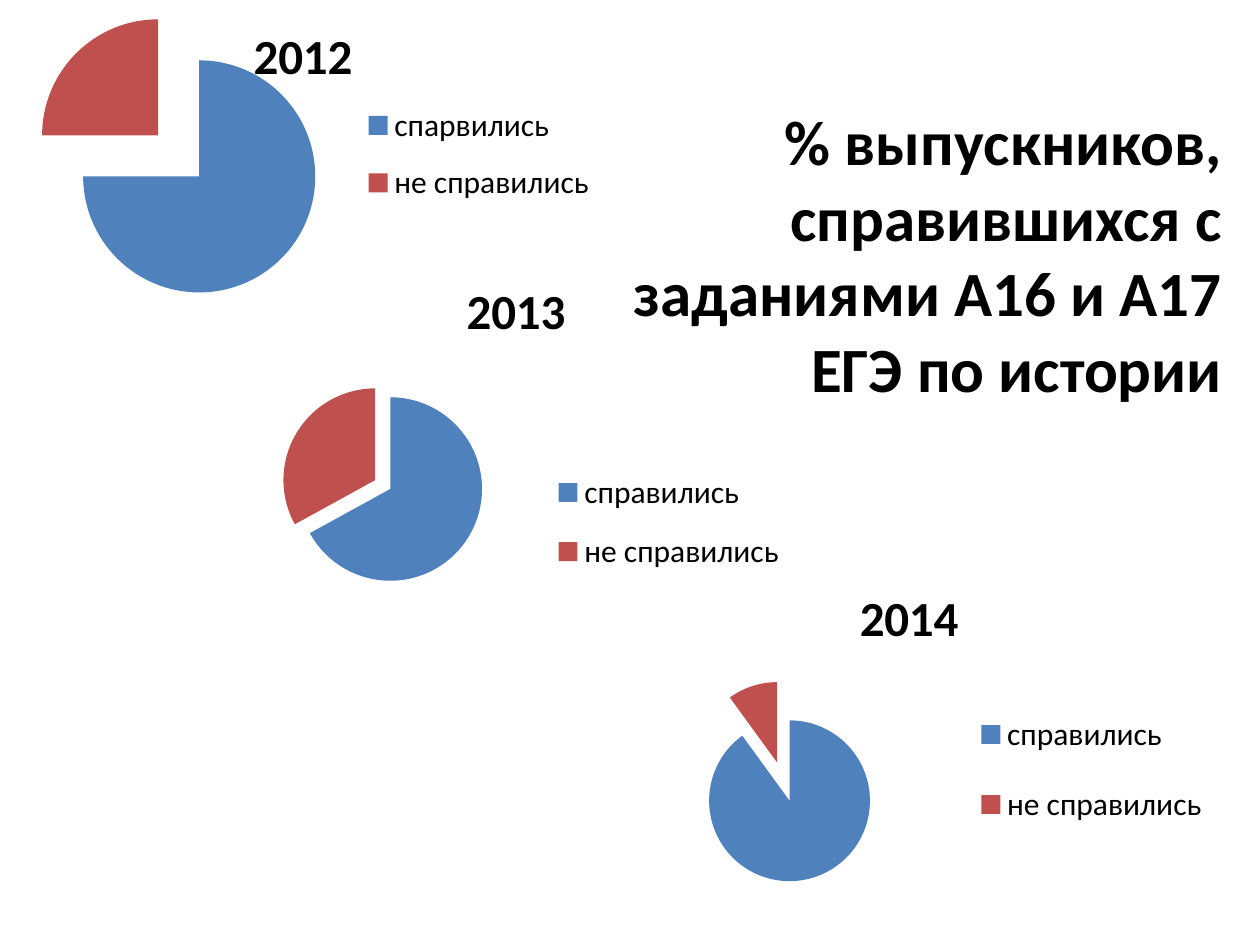
from lxml import etree
from pptx import Presentation
from pptx.chart.data import CategoryChartData
from pptx.dml.color import RGBColor
from pptx.enum import chart as ch, text
from pptx.oxml.ns import qn
from pptx.util import Inches, Pt

COLORS = {"passed": "4F81BD", "failed": "C0504D", "text": "000000"}
FONT = "Calibri"
EXPLOSION = 25


def style_font(font, size, bold=False):
    font.name = FONT
    font.size = Pt(size)
    font.bold = bold
    font.color.rgb = RGBColor.from_string(COLORS["text"])


def add_heading(slide, wording, box):
    heading = slide.shapes.title
    heading.left, heading.top, heading.width, heading.height = map(Inches, box)
    frame = heading.text_frame
    frame.text = wording
    frame.word_wrap = True
    frame.vertical_anchor = text.MSO_ANCHOR.MIDDLE
    line = frame.paragraphs[0]
    line.alignment = text.PP_ALIGN.RIGHT
    style_font(line.runs[0].font, 36, bold=True)


def explosion_before(element, percent):
    """Insert a slice offset just ahead of the given chart element."""
    offset = etree.Element(qn("c:explosion"), val=str(percent))
    element.addprevious(offset)


def place_part(chart, part, box, position, inner=False):
    """Fix a chart part's box, in fractions of the chart."""
    holder = chart._chartSpace.find(".//" + qn(part))
    for old in holder.findall(qn("c:layout")):
        holder.remove(old)
    layout = etree.Element(qn("c:layout"))
    manual = etree.SubElement(layout, qn("c:manualLayout"))
    settings = {"layoutTarget": "inner"} if inner else {}
    settings.update(xMode="edge", yMode="edge")
    settings.update(zip("xywh", box))
    for tag, value in settings.items():
        etree.SubElement(manual, qn("c:" + tag), val=str(value))
    holder.insert(position, layout)


def add_year_pie(slide, year, box, passed_label, passed, legend_box,
                 plot_box=None, offsets=()):
    """Add one year's pie; offsets replace the common explosion per slice."""
    results = CategoryChartData()
    results.categories = [passed_label, "не справились"]
    results.add_series(year, (passed, 100 - passed))
    chart = slide.shapes.add_chart(
        ch.XL_CHART_TYPE.PIE, *map(Inches, box), results).chart
    style_font(chart.font, 18)

    chart.has_title = True
    chart.chart_title.include_in_layout = False
    caption = chart.chart_title.text_frame
    caption.text = year
    style_font(caption.paragraphs[0].runs[0].font, 28, bold=True)

    chart.has_legend = True
    chart.legend.position = ch.XL_LEGEND_POSITION.RIGHT
    chart.legend.include_in_layout = False
    style_font(chart.legend.font, 18)
    place_part(chart, "c:legend", legend_box, position=1)

    pie = chart.plots[0]
    pie.vary_by_categories = True
    series = pie.series[0]
    for index, part in enumerate(("passed", "failed")):
        fill = series.points[index].format.fill
        fill.solid()
        fill.fore_color.rgb = RGBColor.from_string(COLORS[part])

    slices = series._element.findall(qn("c:dPt"))
    explosion_before(slices[0], EXPLOSION)
    for piece, percent in zip(slices, offsets):
        explosion_before(piece.find(qn("c:spPr")), percent)
    if plot_box:
        place_part(chart, "c:plotArea", plot_box, position=0, inner=True)


def main():
    deck = Presentation()
    deck.slide_width, deck.slide_height = Inches(10), Inches(7.5)
    slide = deck.slides.add_slide(deck.slide_layouts[5])
    add_heading(slide,
                "% выпускников, справившихся с заданиями А16 и А17 ЕГЭ по истории",
                (4.76, 1.39, 5.04, 1.25))
    add_year_pie(slide, "2012", (0, 0, 4.81, 2.88), "спарвились", 75,
                 legend_box=(0.59, 0.24, 0.4, 0.37),
                 plot_box=(0, 0.03, 0.59, 0.8))
    add_year_pie(slide, "2013", (1.85, 2.02, 4.49, 2.91), "справились", 67,
                 legend_box=(0.56, 0.54, 0.42, 0.38), offsets=(0, 19))
    add_year_pie(slide, "2014", (4.76, 4.46, 4.91, 2.68), "справились", 90,
                 legend_box=(0.6, 0.36, 0.39, 0.51))
    deck.save("out.pptx")


if __name__ == "__main__":
    main()
